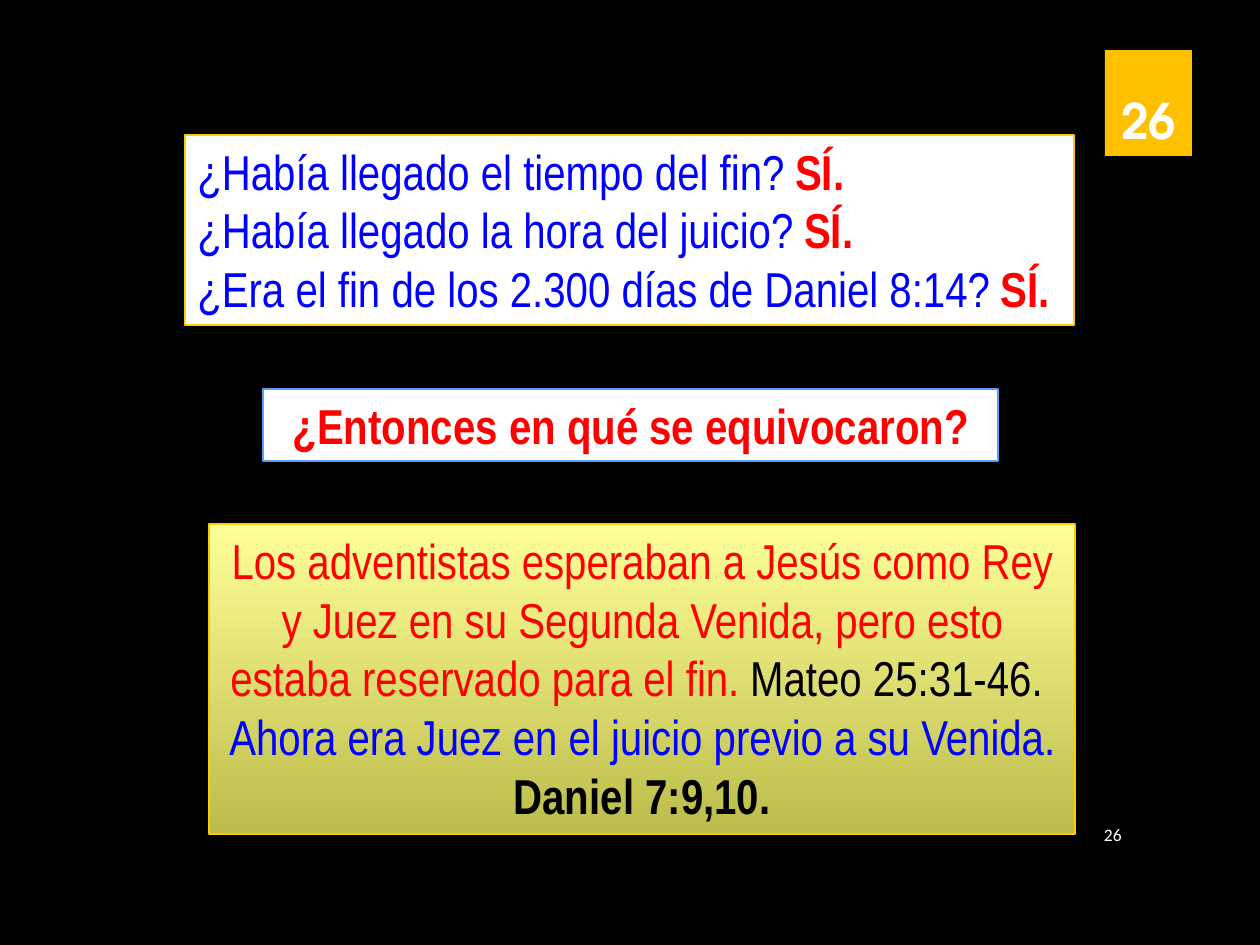
from lxml.etree import SubElement
from pptx import Presentation
from pptx.dml.color import RGBColor
from pptx.enum.shapes import MSO_SHAPE
from pptx.enum.text import MSO_ANCHOR as Anchor, PP_ALIGN as Align
from pptx.oxml.ns import qn
from pptx.util import Pt

PX = 914400 / 126

BLACK = RGBColor(0x00, 0x00, 0x00)
WHITE = RGBColor(0xFF, 0xFF, 0xFF)
BLUE = RGBColor(0x00, 0x00, 0xFF)
RED = RGBColor(0xFF, 0x00, 0x00)
GOLD = RGBColor(0xFF, 0xCA, 0x08)
AMBER = RGBColor(0xFF, 0xC0, 0x00)
SKY = RGBColor(0x5A, 0xA0, 0xF5)
PALE_YELLOW = RGBColor(0xFF, 0xFF, 0x99)
OLIVE = RGBColor(0xBC, 0xBC, 0x4B)

# Each paragraph is a list of runs: text, colour, bold
QUESTIONS = [
    [(question + " ", BLUE, False), ("SÍ.", RED, True)]
    for question in (
        "¿Había llegado el tiempo del fin?",
        "¿Había llegado la hora del juicio?",
        "¿Era el fin de los 2.300 días de Daniel 8:14?",
    )
]
ANSWER = [
    [("Los adventistas esperaban a Jesús como Rey y Juez en su Segunda "
      "Venida, pero esto estaba reservado para el fin. ", RED, False),
     ("Mateo 25:31-46. ", BLACK, False)],
    [("Ahora era Juez en el juicio previo a su Venida. ", BLUE, False),
     ("Daniel 7:9,10.", BLACK, True)],
]
MISTAKE = [[("¿Entonces en qué se equivocaron?", RED, True)]]
PAGE = "26"

# Place (left, top, width, height), fill colours, line colour, line width, align, text
PANELS = [
    ((185, 135, 889, 190), [WHITE], GOLD, 1.5, Align.LEFT, QUESTIONS),
    ((209, 524, 866, 310), [PALE_YELLOW, OLIVE], GOLD, 0.75, Align.CENTER, ANSWER),
    ((263, 389, 735, 72), [WHITE], SKY, 1.5, Align.CENTER, MISTAKE),
]


def px(*lengths):
    return [round(length * PX) for length in lengths]


def outline_text(run, color):
    """Draw the letters with a 1.5 pt edge in the given colour."""
    properties = run.font._element
    edge = SubElement(properties, qn("a:ln"), w=str(Pt(1.5)))
    fill = SubElement(edge, qn("a:solidFill"))
    SubElement(fill, qn("a:srgbClr"), val=str(color))
    properties.insert(0, edge)


def write(shape, paragraphs, align, anchor, font_name, size, outlined=False):
    frame = shape.text_frame
    frame.word_wrap = True
    frame.vertical_anchor = anchor
    for index, runs in enumerate(paragraphs):
        paragraph = frame.add_paragraph() if index else frame.paragraphs[0]
        paragraph.alignment = align
        for text, color, bold in runs:
            run = paragraph.add_run()
            run.text = text
            run.font.name = font_name
            run.font.size = Pt(size)
            run.font.bold = bold
            run.font.color.rgb = color
            if outlined:
                outline_text(run, color)


def add_box(slide, place, fills):
    box = slide.shapes.add_shape(MSO_SHAPE.RECTANGLE, *px(*place))
    box.shadow.inherit = False
    if len(fills) == 1:
        box.fill.solid()
        box.fill.fore_color.rgb = fills[0]
    else:
        box.fill.gradient()
        box.fill.gradient_angle = 270
        for stop, color in zip(box.fill.gradient_stops, fills):
            stop.color.rgb = color
    return box


def main():
    deck = Presentation()
    deck.slide_width, deck.slide_height = px(1260, 945)
    slide = deck.slides.add_slide(deck.slide_layouts[6])
    slide.background.fill.solid()
    slide.background.fill.fore_color.rgb = BLACK

    for place, fills, line_color, line_width, align, paragraphs in PANELS:
        panel = add_box(slide, place, fills)
        panel.line.color.rgb = line_color
        panel.line.width = Pt(line_width)
        write(panel, paragraphs, align, Anchor.TOP, "Arial Narrow", 28, outlined=True)

    footer = slide.shapes.add_textbox(*px(1076, 809, 58, 52))
    write(footer, [[(PAGE, WHITE, False)]], Align.RIGHT, Anchor.MIDDLE, "Calibri", 10)

    badge = add_box(slide, (1105, 50, 87, 106), [AMBER])
    badge.line.fill.background()
    write(badge, [[(PAGE, WHITE, True)]], Align.CENTER, Anchor.BOTTOM,
          "TeX Gyre Adventor", 28)

    deck.save("out.pptx")


if __name__ == "__main__":
    main()
